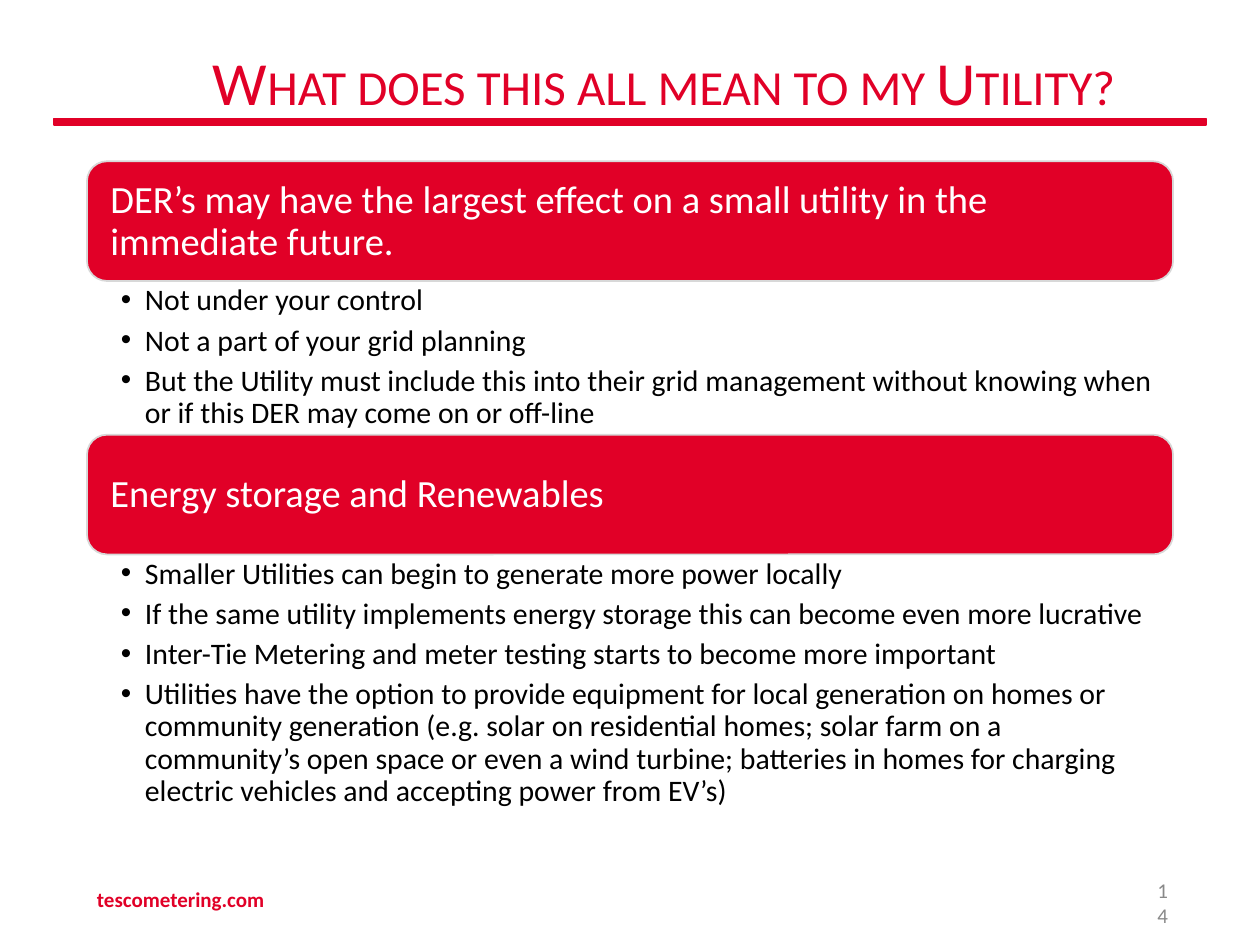
from lxml.etree import SubElement
from pptx import Presentation
from pptx.dml.color import RGBColor
from pptx.enum.shapes import MSO_SHAPE
from pptx.enum.text import MSO_ANCHOR, PP_ALIGN
from pptx.oxml.ns import qn
from pptx.util import Inches, Pt

RED, WHITE, BLACK, SILVER, GRAY = "E10027", "FFFFFF", "000000", "D8D8D8", "898989"

TITLE = "What does this all mean to my Utility?"
SECTIONS = [
    ("DER’s may have the largest effect on a small utility in the immediate future.", 8.4, [
        "Not under your control",
        "Not a part of your grid planning",
        "But the Utility must include this into their grid management without knowing "
        "when or if this DER may come on or off-line",
    ]),
    ("Energy storage and Renewables", 8.32, [
        "Smaller Utilities can begin to generate more power locally",
        "If the same utility implements energy storage this can become even more lucrative",
        "Inter-Tie Metering and meter testing starts to become more important",
        "Utilities have the option to provide equipment for local generation on homes or "
        "community generation (e.g. solar on residential homes; solar farm on a "
        "community’s open space or even a wind turbine; batteries in homes for charging "
        "electric vehicles and accepting power from EV’s)",
    ]),
]
WEBSITE = "tescometering.com"
PAGE_NUMBER = "14"

BANNER_TOP, BANNER_HEIGHT, SECTION_PITCH = 1.28, 0.95, 2.17
LIST_HEIGHTS = (1.17, 1.95)


def color(value):
    return RGBColor.from_string(value)


def add_block(page, shape, left, top, width, height, line):
    block = page.shapes.add_shape(
        shape, Inches(left), Inches(top), Inches(width), Inches(height))
    block.shadow.inherit = False
    block.fill.solid()
    block.fill.fore_color.rgb = color(RED)
    block.line.color.rgb = color(line)
    block.line.width = Pt(1)
    return block


def add_box(page, left, top, width, height):
    return page.shapes.add_textbox(
        Inches(left), Inches(top), Inches(width), Inches(height))


def set_frame(frame, anchor, left=0, right=0):
    frame.word_wrap = True
    frame.vertical_anchor = anchor
    frame.margin_left, frame.margin_right = Inches(left), Inches(right)
    frame.margin_top = frame.margin_bottom = 0


def style(para, size, ink, bold=False, align=PP_ALIGN.LEFT):
    para.alignment = align
    para.font.name = "Calibri"
    para.font.size = Pt(size)
    para.font.bold = bold
    para.font.color.rgb = color(ink)


def add_label(page, place, text, size, ink, right=0, left=0, **options):
    box = add_box(page, *place)
    set_frame(box.text_frame, MSO_ANCHOR.MIDDLE, left, right)
    para = box.text_frame.paragraphs[0]
    span = para.add_run()
    span.text = text
    style(para, size, ink, **options)
    return span


def add_banner(page, top, text):
    banner = add_block(page, MSO_SHAPE.ROUNDED_RECTANGLE,
                       0.69, top, 8.62, BANNER_HEIGHT, SILVER)
    set_frame(banner.text_frame, MSO_ANCHOR.MIDDLE, 0.14, 0.6)
    para = banner.text_frame.paragraphs[0]
    para.text = text
    para.line_spacing = Pt(24)
    style(para, 22, WHITE)


def add_bullets(page, top, width, height, items):
    frame = add_box(page, 0.81, top, width, height).text_frame
    set_frame(frame, MSO_ANCHOR.TOP)
    for index, item in enumerate(items):
        para = frame.add_paragraph() if index else frame.paragraphs[0]
        para.text = item
        para.line_spacing = Pt(18.4)
        para.space_before = Pt(4.5 if index else 0)
        properties = para._p.get_or_add_pPr()
        properties.set("marL", str(Inches(0.34)))
        properties.set("indent", str(Inches(-0.19)))
        SubElement(properties, qn("a:buFont"), typeface="Arial")
        SubElement(properties, qn("a:buChar"), char="•")
        style(para, 17, BLACK)


def main():
    deck = Presentation()
    deck.slide_width, deck.slide_height = Inches(10), Inches(7.5)
    page = deck.slides.add_slide(deck.slide_layouts[6])

    add_block(page, MSO_SHAPE.RECTANGLE, 0.43, 0.94, 9.14, 0.05, RED)
    title = add_label(page, (1.69, 0.27, 7.88, 0.74), TITLE, 35, RED)
    title._r.get_or_add_rPr().set("cap", "small")

    for index, (heading, width, items) in enumerate(SECTIONS):
        top = BANNER_TOP + index * SECTION_PITCH
        add_banner(page, top, heading)
        add_bullets(page, top + BANNER_HEIGHT + 0.03, width, LIST_HEIGHTS[index], items)

    add_label(page, (0.77, 7.02, 1.6, 0.23), WEBSITE, 12, RED, bold=True)
    add_label(page, (9, 7.05, 0.27, 0.23), PAGE_NUMBER, 12, GRAY,
              left=0.13, align=PP_ALIGN.RIGHT)

    deck.save("out.pptx")


if __name__ == "__main__":
    main()
